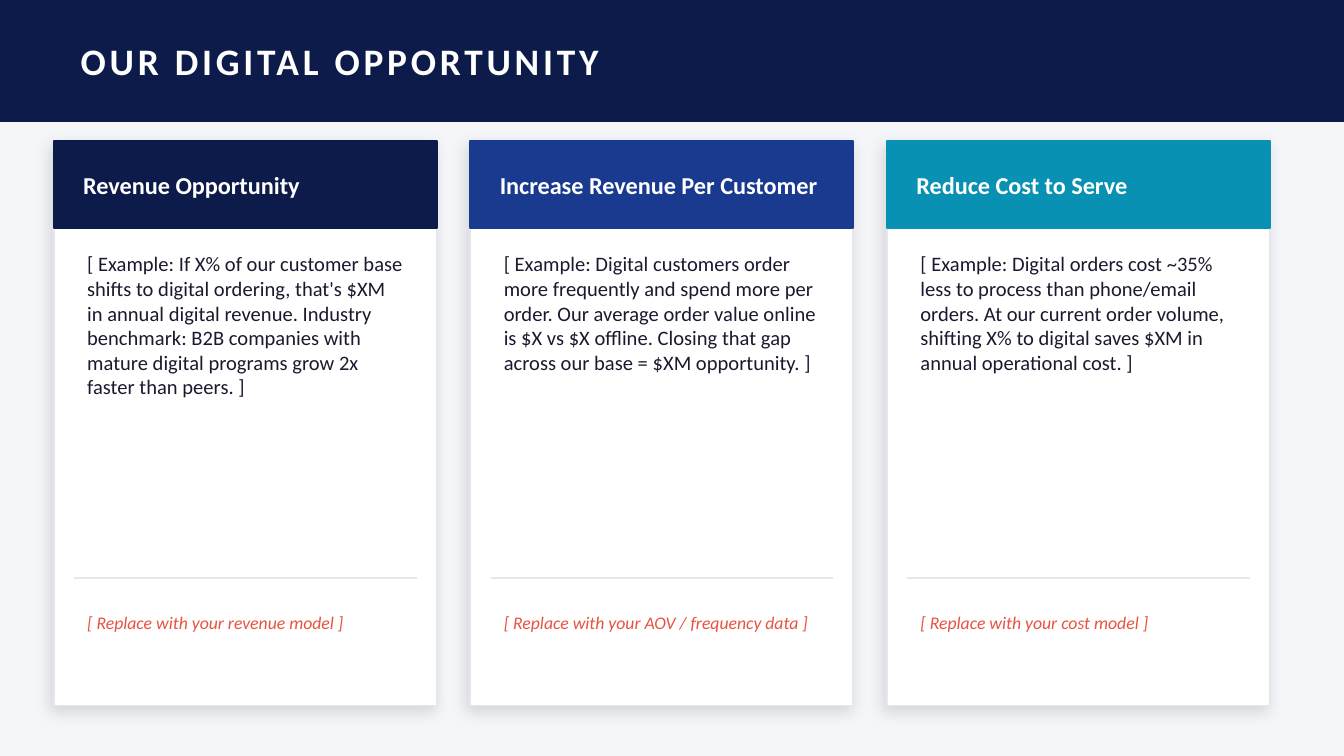
from lxml import etree
from pptx import Presentation
from pptx.dml.color import RGBColor
from pptx.enum.shapes import MSO_CONNECTOR, MSO_SHAPE
from pptx.enum.text import MSO_ANCHOR, MSO_AUTO_SIZE, PP_ALIGN
from pptx.oxml.ns import qn
from pptx.util import Pt

RECTANGLE = MSO_SHAPE.RECTANGLE
STRAIGHT = MSO_CONNECTOR.STRAIGHT
TOP, MIDDLE = MSO_ANCHOR.TOP, MSO_ANCHOR.MIDDLE
LEFT = PP_ALIGN.LEFT
NO_FIT = MSO_AUTO_SIZE.NONE
PX = 4572

COLORS = {
    "background": "F5F6FA",
    "navy": "0D1B4B",
    "blue": "1A3A8F",
    "teal": "0891B2",
    "white": "FFFFFF",
    "border": "E5E7EB",
    "ink": "1A1A2E",
    "coral": "E8533F",
}
COLORS = {name: RGBColor.from_string(value) for name, value in COLORS.items()}

FORMATS = {
    "title": {"size": Pt(20), "bold": True, "italic": False, "color": "white"},
    "heading": {"size": Pt(13), "bold": True, "italic": False, "color": "white"},
    "example": {"size": Pt(11), "bold": False, "italic": False, "color": "ink"},
    "prompt": {"size": Pt(9.5), "bold": False, "italic": True, "color": "coral"},
}

CARDS = [
    ("Revenue Opportunity", "navy",
     "[ Example: If X% of our customer base shifts to digital ordering, that's $XM in annual "
     "digital revenue. Industry benchmark: B2B companies with mature digital programs grow 2x "
     "faster than peers. ]",
     "[ Replace with your revenue model ]"),
    ("Increase Revenue Per Customer", "blue",
     "[ Example: Digital customers order more frequently and spend more per order. Our average "
     "order value online is $X vs $X offline. Closing that gap across our base = $XM "
     "opportunity. ]",
     "[ Replace with your AOV / frequency data ]"),
    ("Reduce Cost to Serve", "teal",
     "[ Example: Digital orders cost ~35% less to process than phone/email orders. At our "
     "current order volume, shifting X% to digital saves $XM in annual operational cost. ]",
     "[ Replace with your cost model ]"),
]
CARD_LEFT, CARD_TOP, CARD_WIDTH, CARD_STEP = 80, 210, 570, 620

deck = Presentation()
deck.slide_width, deck.slide_height = 2000 * PX, 1125 * PX
page = deck.slides.add_slide(deck.slide_layouts[5])
page.background.fill.solid()
page.background.fill.fore_color.rgb = COLORS["background"]


def add_panel(left, top, width, height, fill, line):
    panel = page.shapes.add_shape(RECTANGLE, left * PX, top * PX, width * PX, height * PX)
    panel.shadow.inherit = False
    panel.fill.solid()
    panel.fill.fore_color.rgb = COLORS[fill]
    panel.line.color.rgb = COLORS[line]
    panel.line.width = Pt(1)
    return panel


def write_text(box, text, style, anchor):
    frame = box.text_frame
    frame.word_wrap = True
    frame.auto_size = NO_FIT
    frame.vertical_anchor = anchor
    para = frame.paragraphs[0]
    para.alignment = LEFT
    span = para.add_run()
    span.text = text
    span.font.name = "Calibri"
    for name, value in FORMATS[style].items():
        if name == "color":
            span.font.color.rgb = COLORS[value]
        else:
            setattr(span.font, name, value)
    return span


title = page.shapes.title
title.left, title.top, title.width, title.height = 100 * PX, 0, 1800 * PX, 180 * PX
title_span = write_text(title, "OUR DIGITAL OPPORTUNITY", "title", MIDDLE)
title_span.font._element.set("spc", "200")
banner = add_panel(0, 0, 2000, 180, "navy", "navy")
title._element.addprevious(banner._element)

for index, (heading, accent, example, prompt) in enumerate(CARDS):
    left = CARD_LEFT + index * CARD_STEP
    card = add_panel(left, CARD_TOP, CARD_WIDTH, 840, "white", "border")
    effects = card._element.spPr.find(qn("a:effectLst"))
    shadow = etree.SubElement(effects, qn("a:outerShdw"), blurRad=str(Pt(8)), dist=str(Pt(3)),
                              dir=str(135 * 60000), algn="bl", rotWithShape="0")
    shadow_color = etree.SubElement(shadow, qn("a:srgbClr"), val="000000")
    etree.SubElement(shadow_color, qn("a:alpha"), val="12000")

    add_panel(left, CARD_TOP, CARD_WIDTH, 130, accent, accent)

    for text, style, anchor, inset, top, width, height in [
        (heading, "heading", MIDDLE, 24, CARD_TOP, 530, 130),
        (example, "example", TOP, 30, 364, 510, 480),
        (prompt, "prompt", MIDDLE, 30, 876, 510, 100),
    ]:
        box = page.shapes.add_textbox((left + inset) * PX, top * PX, width * PX, height * PX)
        write_text(box, text, style, anchor)

    divider = page.shapes.add_connector(
        STRAIGHT, (left + 30) * PX, 860 * PX, (left + 540) * PX, 860 * PX)
    divider.line.color.rgb = COLORS["border"]
    divider.line.width = Pt(1)
    etree.SubElement(divider._element.spPr, qn("a:effectLst"))

deck.save("out.pptx")
